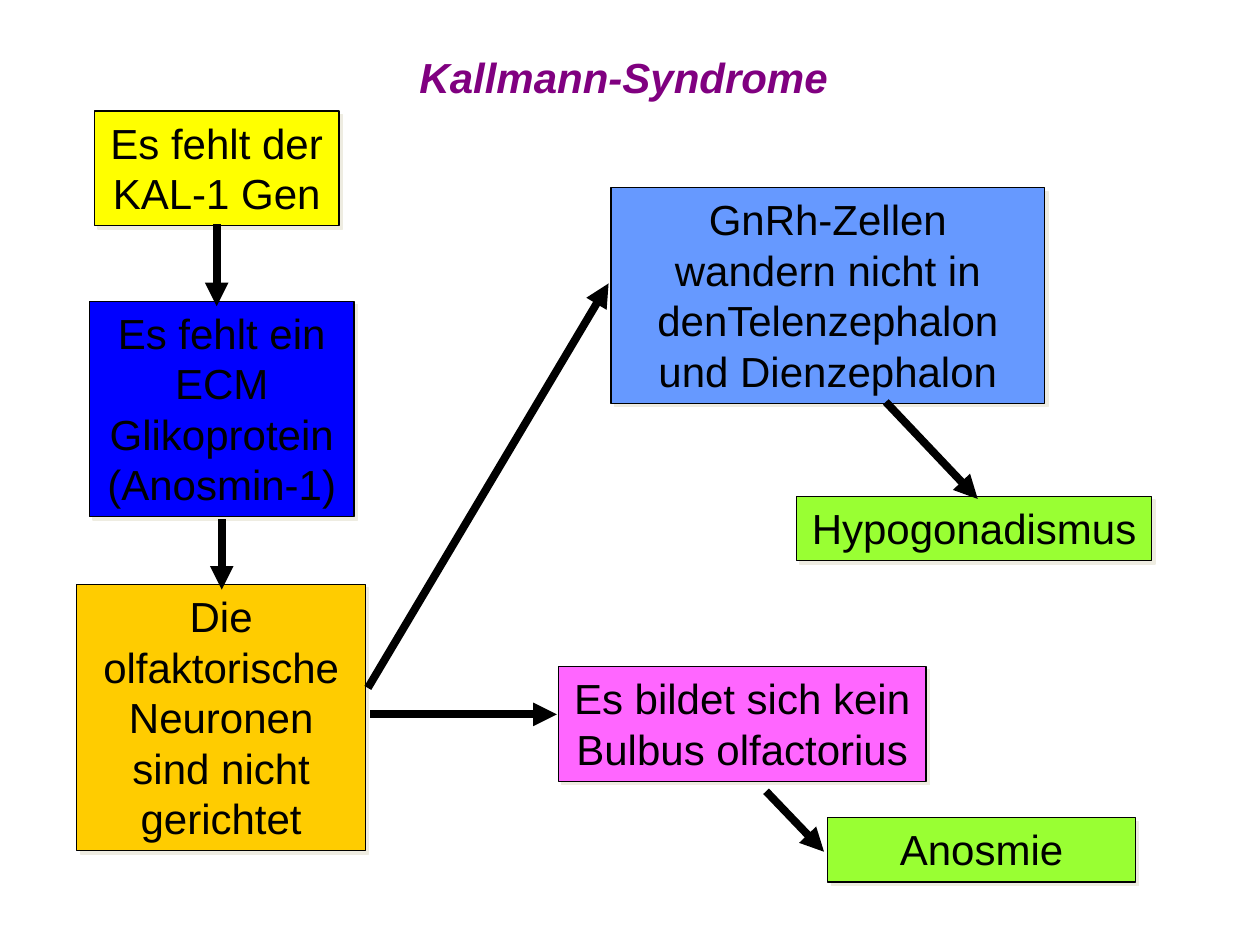
from pptx import Presentation
from pptx.dml.color import RGBColor
from pptx.enum.shapes import MSO_CONNECTOR as Connector, MSO_SHAPE as Shape
from pptx.enum.text import MSO_ANCHOR as Anchor, MSO_AUTO_SIZE as AutoSize, PP_ALIGN as Align
from pptx.oxml.ns import qn
from pptx.util import Inches, Pt
from lxml.etree import SubElement

THEME = {
    "font": "Arial", "size": 24, "title": "800080", "ink": "000000", "shadow": "EEECE1",
    "gene": "FFFF00", "protein": "0000FF", "neurons": "FFCC00", "bulb": "FF66FF",
    "cells": "6699FF", "outcome": "99FF33", "border": 0.75, "arrow": 4.5,
}

# Content: title, boxes (text, fill, left, top, width, height), arrows (from, to)
TITLE = ("Kallmann-Syndrome", 2.97, 0.36, 3.96, 0.5)
BOXES = [
    ("Es fehlt der KAL-1 Gen", "gene", 0.75, 0.88, 1.94, 0.91),
    ("Es fehlt ein ECM Glikoprotein (Anosmin-1)", "protein", 0.71, 2.39, 2.1, 1.71),
    ("Die olfaktorische Neuronen sind nicht gerichtet", "neurons", 0.61, 4.64, 2.29, 2.11),
    ("Es bildet sich kein Bulbus olfactorius", "bulb", 4.43, 5.29, 2.92, 0.91),
    ("GnRh-Zellen wandern nicht in denTelenzephalon und Dienzephalon", "cells",
     4.85, 1.49, 3.44, 1.71),
    ("Anosmie", "outcome", 6.57, 6.49, 2.44, 0.51),
    ("Hypogonadismus", "outcome", 6.32, 3.94, 2.82, 0.51),
]
ARROWS = [
    ((1.72, 1.78), (1.72, 2.43)),
    ((1.76, 4.12), (1.76, 4.68)),
    ((2.92, 5.46), (4.83, 2.25)),
    ((2.94, 5.67), (4.42, 5.67)),
    ((7.03, 3.19), (7.76, 3.96)),
    ((6.08, 6.28), (6.54, 6.76)),
]


def color(name):
    return RGBColor.from_string(THEME[name])


def write(shape, text, ink, emphasis=False):
    frame = shape.text_frame
    frame.word_wrap = True
    frame.auto_size = AutoSize.SHAPE_TO_FIT_TEXT
    frame.vertical_anchor = Anchor.TOP
    paragraph = frame.paragraphs[0]
    paragraph.alignment = Align.CENTER
    paragraph.space_before = Pt(0)
    run = paragraph.add_run()
    run.text = text
    run.font.name = THEME["font"]
    run.font.size = Pt(THEME["size"])
    run.font.bold = run.font.italic = emphasis
    run.font.color.rgb = color(ink)


def add_offset_shadow(shape):
    shape.shadow.inherit = False
    effects = shape._element.spPr.find(qn("a:effectLst"))
    shadow = SubElement(effects, qn("a:outerShdw"), dist=str(Pt(2.8)), dir="2700000",
                        algn="ctr", rotWithShape="0")
    SubElement(shadow, qn("a:srgbClr"), val=THEME["shadow"])


def add_box(slide, text, fill, *place):
    box = slide.shapes.add_shape(Shape.RECTANGLE, *map(Inches, place))
    box.fill.solid()
    box.fill.fore_color.rgb = color(fill)
    box.line.color.rgb = color("ink")
    box.line.width = Pt(THEME["border"])
    add_offset_shadow(box)
    write(box, text, "ink")


def add_arrow(slide, start, end):
    arrow = slide.shapes.add_connector(Connector.STRAIGHT, *map(Inches, start + end))
    arrow.line.color.rgb = color("ink")
    arrow.line.width = Pt(THEME["arrow"])
    SubElement(arrow.line._get_or_add_ln(), qn("a:tailEnd"), type="triangle")
    SubElement(arrow._element.spPr, qn("a:effectLst"))


def main():
    presentation = Presentation()
    presentation.slide_width, presentation.slide_height = Inches(10), Inches(7.5)
    slide = presentation.slides.add_slide(presentation.slide_layouts[5])

    # Title
    text, *place = TITLE
    title = slide.shapes.title
    title.left, title.top, title.width, title.height = map(Inches, place)
    write(title, text, "title", emphasis=True)

    # Flow chart
    for box in BOXES:
        add_box(slide, *box)
    for start, end in ARROWS:
        add_arrow(slide, start, end)

    presentation.save("out.pptx")


if __name__ == "__main__":
    main()
